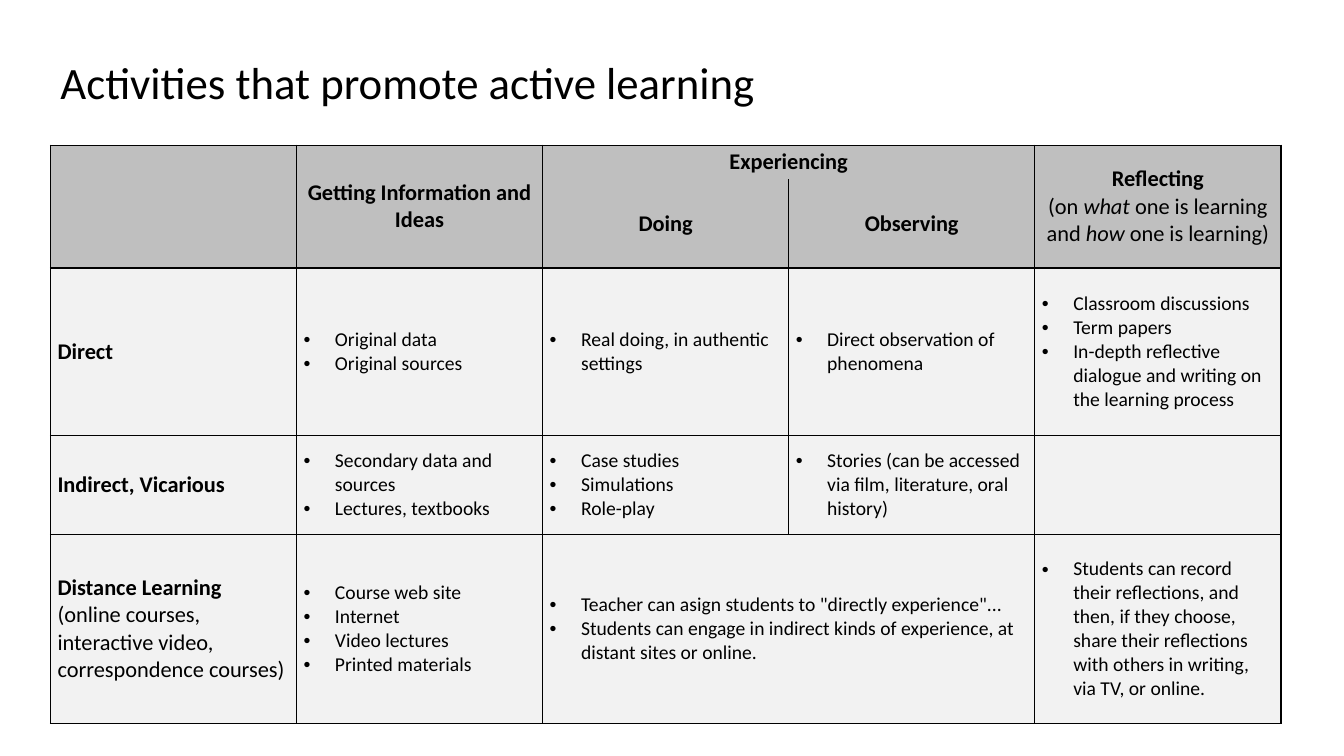
import pptx
import pptx.util
import pptx.dml.color
import pptx.enum.text
import pptx.oxml.ns
from lxml import etree

Cm = pptx.util.Cm
Pt = pptx.util.Pt
qn = pptx.oxml.ns.qn

COLORS = {"text": "000000", "border": "000000", "header": "BFBFBF", "body": "F2F2F2"}
FONT = "Calibri"
HEADING_SIZE = 16
ITEM_SIZE = 14
HEADER_ROWS = 2
ROW_HEIGHTS = [0.86, 1.73, 4.22, 2.49, 4.77]
COLUMN_COUNT = 5

MERGES = [((0, 0), (1, 0)), ((0, 1), (1, 1)), ((0, 2), (0, 3)),
          ((0, 4), (1, 4)), ((4, 2), (4, 3))]
OPEN_EDGES = {(0, 2, "lnB"), (0, 3, "lnB"), (1, 2, "lnT"), (1, 3, "lnT")}

HEADINGS = {
    (0, 1): [("Getting Information and Ideas", "bold")],
    (0, 2): [("Experiencing", "bold")],
    (0, 4): [("Reflecting", "bold"), ("\n", ""), ("(on ", ""), ("what", "italic"),
             (" one is learning and ", ""), ("how", "italic"), (" one is learning)", "")],
    (1, 2): [("Doing", "bold")],
    (1, 3): [("Observing", "bold")],
    (2, 0): [("Direct", "bold")],
    (3, 0): [("Indirect, Vicarious", "bold")],
    (4, 0): [("Distance Learning", "bold"), ("\n", ""),
             ("(online courses, interactive video, correspondence courses)", "")],
}

ACTIVITIES = {
    (2, 1): ["Original data", "Original sources"],
    (2, 2): ["Real doing, in authentic settings"],
    (2, 3): ["Direct observation of phenomena"],
    (2, 4): ["Classroom discussions", "Term papers",
             "In-depth reflective dialogue and writing on the learning process"],
    (3, 1): ["Secondary data and sources", "Lectures, textbooks"],
    (3, 2): ["Case studies", "Simulations", "Role-play"],
    (3, 3): ["Stories (can be accessed via film, literature, oral history)"],
    (4, 1): ["Course web site", "Internet", "Video lectures", "Printed materials"],
    (4, 2): ['Teacher can asign students to "directly experience"...',
             "Students can engage in indirect kinds of experience, at distant sites or online."],
    (4, 4): ["Students can record their reflections, and then, if they choose, share their "
             "reflections with others in writing, via TV, or online."],
}


def color(name):
    return pptx.dml.color.RGBColor.from_string(COLORS[name])


def format_run(run, size, style=""):
    run.font.name = FONT
    run.font.size = Pt(size)
    run.font.color.rgb = color("text")
    run.font.bold = style == "bold"
    run.font.italic = style == "italic"


def set_borders(cell, row, column):
    properties = cell._tc.get_or_add_tcPr()
    for edge in ("lnL", "lnR", "lnT", "lnB"):
        line = etree.SubElement(properties, qn("a:" + edge), w=str(Pt(1)))
        if (row, column, edge) in OPEN_EDGES:
            etree.SubElement(line, qn("a:noFill"))
        else:
            fill = etree.SubElement(line, qn("a:solidFill"))
            etree.SubElement(fill, qn("a:srgbClr"), val=COLORS["border"])


def write_heading(cell, parts, alignment):
    paragraph = cell.text_frame.paragraphs[0]
    paragraph.alignment = alignment
    for text, style in parts:
        if text == "\n":
            paragraph.add_line_break()
            line_break = paragraph._p.findall(qn("a:br"))[-1]
            etree.SubElement(line_break, qn("a:rPr"), sz=str(HEADING_SIZE * 100))
        else:
            run = paragraph.add_run()
            run.text = text
            format_run(run, HEADING_SIZE, style)


def write_bullets(cell, items):
    cell.text_frame.text = "\n".join(items)
    for paragraph in cell.text_frame.paragraphs:
        properties = paragraph._p.get_or_add_pPr()
        properties.set("marL", str(Cm(0.79)))
        properties.set("indent", str(-Cm(0.79)))
        etree.SubElement(properties, qn("a:buFont"), typeface="Arial")
        etree.SubElement(properties, qn("a:buChar"), char="•")
        format_run(paragraph.runs[0], ITEM_SIZE)


def fill_cell(cell, row, column):
    is_header = row < HEADER_ROWS
    set_borders(cell, row, column)
    cell.fill.solid()
    cell.fill.fore_color.rgb = color("header" if is_header else "body")
    cell.vertical_anchor = pptx.enum.text.MSO_ANCHOR.MIDDLE
    cell.margin_left = cell.margin_right = Cm(0.18)
    cell.margin_top = cell.margin_bottom = Cm(0.08)
    if (row, column) in HEADINGS:
        alignments = pptx.enum.text.PP_ALIGN
        alignment = alignments.CENTER if is_header else alignments.LEFT
        write_heading(cell, HEADINGS[row, column], alignment)
    elif (row, column) in ACTIVITIES:
        write_bullets(cell, ACTIVITIES[row, column])
    else:
        paragraph = cell.text_frame.paragraphs[0]
        etree.SubElement(paragraph._p, qn("a:endParaRPr"), sz=str(ITEM_SIZE * 100))


def place_title(slide, left, top, width, height):
    title = slide.shapes.title
    title.left, title.top, title.width, title.height = left, top, width, height
    frame = title.text_frame
    frame.text = "Activities that promote active learning"
    frame.word_wrap = True
    frame.auto_size = pptx.enum.text.MSO_AUTO_SIZE.NONE
    frame.vertical_anchor = pptx.enum.text.MSO_ANCHOR.MIDDLE
    paragraph = frame.paragraphs[0]
    paragraph.alignment = pptx.enum.text.PP_ALIGN.LEFT
    paragraph.line_spacing = 0.9
    format_run(paragraph.runs[0], 32)


def place_activity_table(slide, left, top, width, height):
    table = slide.shapes.add_table(
        len(ROW_HEIGHTS), COLUMN_COUNT, left, top, width, height).table
    table.first_row = False
    table.horz_banding = False
    for column in table.columns:
        column.width = width // COLUMN_COUNT
    for row, row_height in zip(table.rows, ROW_HEIGHTS):
        row.height = int(height * row_height / sum(ROW_HEIGHTS))
    for first, last in MERGES:
        table.cell(*first).merge(table.cell(*last))
    for row in range(len(ROW_HEIGHTS)):
        for column in range(COLUMN_COUNT):
            fill_cell(table.cell(row, column), row, column)


def main():
    presentation = pptx.Presentation()
    presentation.slide_width = Cm(33.87)
    presentation.slide_height = Cm(19.05)
    slide = presentation.slides.add_slide(presentation.slide_layouts[5])
    place_title(slide, Cm(1.27), Cm(1.32), Cm(29.21), Cm(1.65))
    place_activity_table(slide, Cm(1.27), Cm(3.66), Cm(31.01), Cm(14.07))
    presentation.save("out.pptx")


if __name__ == "__main__":
    main()
